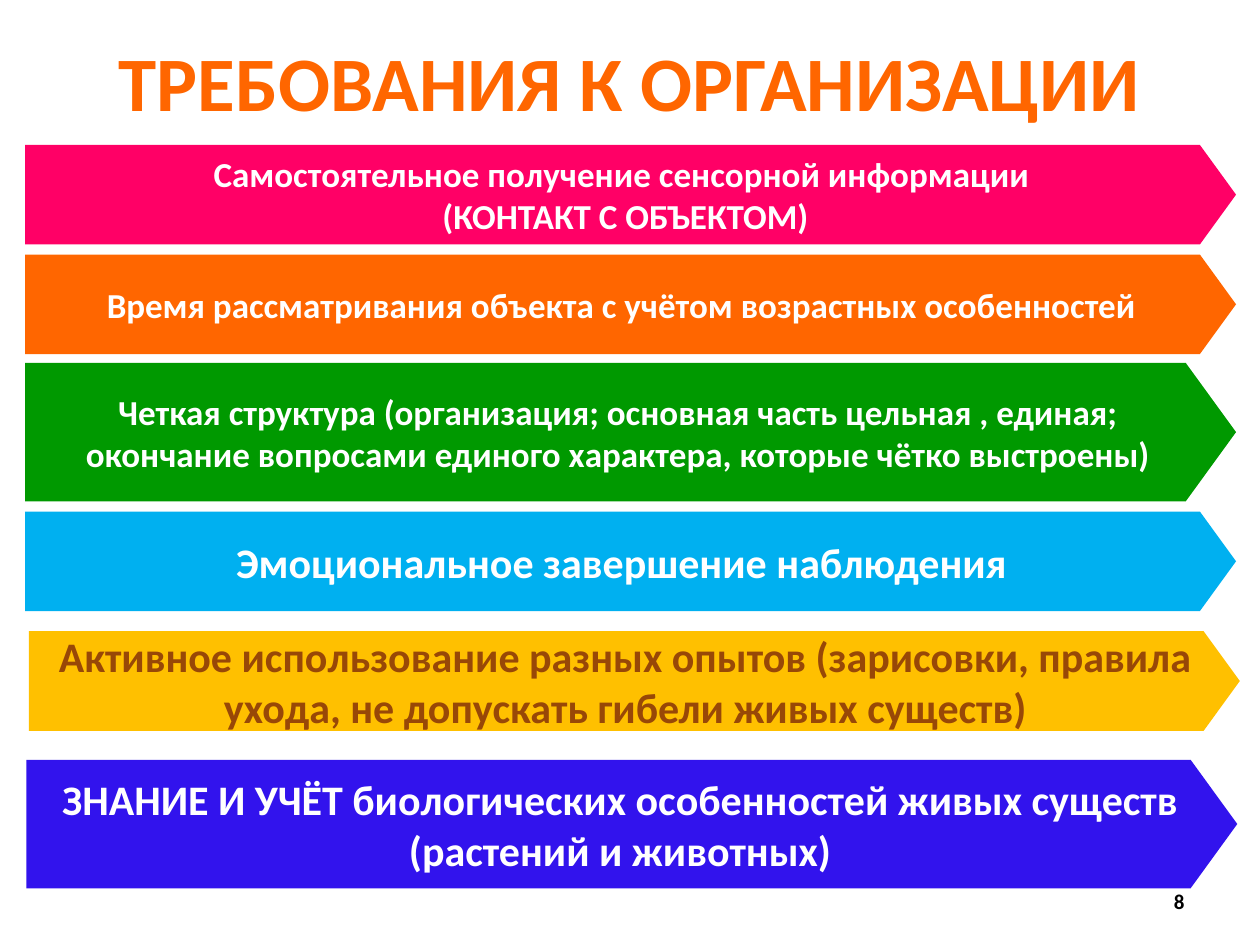
import pptx
import pptx.dml.color
import pptx.enum.shapes
import pptx.enum.text
import pptx.util

Inches = pptx.util.Inches
ALIGN = pptx.enum.text.PP_ALIGN
WHITE = "FFFFFF"
ARROW_WIDTH = 9.61

# left, top, height, fill, text size, text colour, paragraphs
REQUIREMENTS = [
    (0.2, 1.15, 0.79, "FF0066", 20, WHITE,
     ["Самостоятельное получение сенсорной информации", " (КОНТАКТ С ОБЪЕКТОМ)"]),
    (0.2, 2.02, 0.79, "FF6600", 20, WHITE,
     ["Время рассматривания объекта с учётом возрастных особенностей"]),
    (0.2, 2.88, 1.1, "009900", 20, WHITE,
     ["Четкая структура (организация; основная часть цельная , единая; "
      "окончание вопросами единого характера, которые чётко выстроены)"]),
    (0.2, 4.06, 0.79, "00B0F0", 24, WHITE,
     ["Эмоциональное завершение наблюдения"]),
    (0.23, 5.01, 0.79, "FFC000", 24, "984807",
     ["Активное использование разных опытов (зарисовки, правила ухода, "
      "не допускать гибели живых существ)"]),
    (0.21, 6.03, 1.02, "3213ED", 24, WHITE,
     ["ЗНАНИЕ И УЧЁТ биологических особенностей живых существ "
      "(растений и животных)"]),
]


def color(value):
    return pptx.dml.color.RGBColor.from_string(value)


class SlideBuilder:
    font = "Calibri"

    def __init__(self, slide):
        self.slide = slide
        slide.background.fill.solid()
        slide.background.fill.fore_color.rgb = color(WHITE)

    def set_text(self, shape, paragraphs, size, ink, align):
        frame = shape.text_frame
        frame.word_wrap = True
        frame.vertical_anchor = pptx.enum.text.MSO_ANCHOR.MIDDLE
        frame.text = "\n".join(paragraphs)
        for para in frame.paragraphs:
            para.alignment = align
            for span in para.runs:
                span.font.name = self.font
                span.font.size = pptx.util.Pt(size)
                span.font.bold = True
                span.font.color.rgb = color(ink)

    def text(self, left, top, width, height, words, size, ink, align):
        box = self.slide.shapes.add_textbox(
            Inches(left), Inches(top), Inches(width), Inches(height))
        self.set_text(box, [words], size, ink, align)

    def arrow(self, left, top, height, fill, size, ink, paragraphs):
        shape = self.slide.shapes.add_shape(
            pptx.enum.shapes.MSO_SHAPE.PENTAGON,
            Inches(left), Inches(top), Inches(ARROW_WIDTH), Inches(height))
        shape.adjustments[0] = 0.363
        shape.shadow.inherit = False
        shape.fill.solid()
        shape.fill.fore_color.rgb = color(fill)
        shape.line.fill.background()
        self.set_text(shape, paragraphs, size, ink, ALIGN.CENTER)


def main():
    deck = pptx.Presentation()
    deck.slide_width, deck.slide_height = Inches(10), Inches(7.5)
    page = SlideBuilder(deck.slides.add_slide(deck.slide_layouts[6]))
    page.text(0.5, 0.13, 9, 1.02, "ТРЕБОВАНИЯ К ОРГАНИЗАЦИИ", 44, "FF6600", ALIGN.CENTER)
    for requirement in REQUIREMENTS:
        page.arrow(*requirement)
    page.text(7.17, 6.95, 2.33, 0.4, "8", 12, "000000", ALIGN.RIGHT)
    deck.save("out.pptx")


if __name__ == "__main__":
    main()
